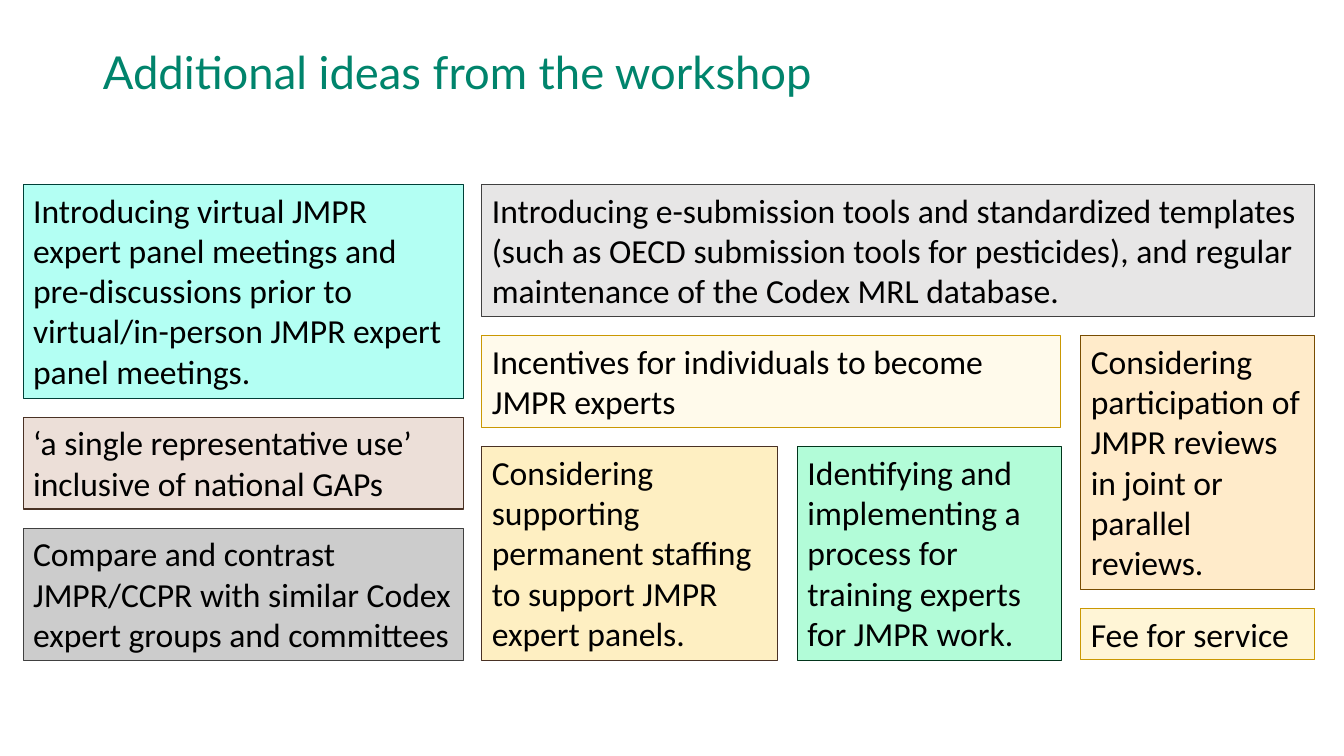
"""Build the slide of additional workshop ideas."""
from pptx import Presentation
from pptx.dml.color import RGBColor
from pptx.enum.shapes import MSO_SHAPE
from pptx.enum.text import MSO_ANCHOR, MSO_AUTO_SIZE, PP_ALIGN
from pptx.util import Pt

PX = 9144
GAP = 19
IDEAS_TOP = 183
LEFT_COLUMN = 23
MAIN_COLUMN = 478
TRAINING_COLUMN = 791
RIGHT_COLUMN = 1072

BLACK = RGBColor(0x00, 0x00, 0x00)
TEAL = RGBColor(0x00, 0x84, 0x6C)
CHARCOAL = RGBColor(0x40, 0x40, 0x40)
GOLD = RGBColor(0xCA, 0x98, 0x02)
BROWN = RGBColor(0x49, 0x31, 0x24)
DARK_GREEN = RGBColor(0x02, 0x35, 0x1C)
DARK_TEAL = RGBColor(0x00, 0x40, 0x37)
DARK_ORANGE = RGBColor(0x78, 0x4C, 0x01)
AQUA = RGBColor(0xB3, 0xFF, 0xF3)
MINT = RGBColor(0xB2, 0xFC, 0xD8)
ROSE = RGBColor(0xEC, 0xDF, 0xD8)
SILVER = RGBColor(0xCC, 0xCC, 0xCC)
PALE_GREY = RGBColor(0xE7, 0xE6, 0xE6)
IVORY = RGBColor(0xFF, 0xFA, 0xEB)
CREAM = RGBColor(0xFF, 0xF5, 0xD6)
YELLOW = RGBColor(0xFE, 0xEF, 0xC2)
PEACH = RGBColor(0xFF, 0xEB, 0xCA)


def write(frame, text, font="Calibri", size=24, color=BLACK, spacing=1.0,
          anchor=MSO_ANCHOR.TOP, fit=MSO_AUTO_SIZE.SHAPE_TO_FIT_TEXT):
    frame.text = text
    frame.word_wrap = True
    frame.auto_size = fit
    frame.vertical_anchor = anchor
    paragraph = frame.paragraphs[0]
    paragraph.alignment = PP_ALIGN.LEFT
    paragraph.line_spacing = spacing
    paragraph.font.name = font
    paragraph.font.size = Pt(size)
    paragraph.font.color.rgb = color


class IdeaSlide:
    def __init__(self, deck):
        self.slide = deck.slides.add_slide(deck.slide_layouts[5])

    def title(self, text, left, top, width, height):
        heading = self.slide.shapes.title
        heading.left, heading.top = left * PX, top * PX
        heading.width, heading.height = width * PX, height * PX
        write(heading.text_frame, text, font="Lato", size=32.4, color=TEAL,
              spacing=0.9, anchor=MSO_ANCHOR.MIDDLE, fit=MSO_AUTO_SIZE.NONE)

    def idea(self, text, left, top, width, height, fill, border):
        card = self.slide.shapes.add_shape(
            MSO_SHAPE.RECTANGLE, left * PX, top * PX, width * PX, height * PX)
        card.shadow.inherit = False
        card.fill.solid()
        card.fill.fore_color.rgb = fill
        card.line.color.rgb = border
        card.line.width = Pt(0.75)
        write(card.text_frame, text)

    def stack(self, left, top, width, ideas):
        for text, lines, fill, border in ideas:
            height = round(10 + 40.35 * lines)
            self.idea(text, left, top, width, height, fill, border)
            top += height + GAP
        return top


def main():
    deck = Presentation()
    deck.slide_width, deck.slide_height = 1333 * PX, 750 * PX
    workshop = IdeaSlide(deck)
    workshop.title("Additional ideas from the workshop", 92, 29, 866, 91)

    workshop.stack(LEFT_COLUMN, IDEAS_TOP, 437, [
        ("Introducing virtual JMPR expert panel meetings and pre-discussions "
         "prior to virtual/in-person JMPR expert panel meetings.",
         5, AQUA, DARK_TEAL),
        ("‘a single representative use’ inclusive of national GAPs",
         2, ROSE, BROWN),
        ("Compare and contrast JMPR/CCPR with similar Codex expert groups "
         "and committees", 3, SILVER, CHARCOAL),
    ])
    below_tools = workshop.stack(MAIN_COLUMN, IDEAS_TOP, 826, [
        ("Introducing e-submission tools and standardized templates (such as "
         "OECD submission tools for pesticides), and regular maintenance of "
         "the Codex MRL database.", 3, PALE_GREY, CHARCOAL),
    ])
    below_incentives = workshop.stack(MAIN_COLUMN, below_tools, 574, [
        ("Incentives for individuals to become JMPR experts",
         2, IVORY, GOLD),
    ])
    workshop.stack(MAIN_COLUMN, below_incentives, 293, [
        ("Considering supporting permanent staffing to support JMPR expert "
         "panels.", 5, YELLOW, BROWN),
    ])
    workshop.stack(TRAINING_COLUMN, below_incentives, 262, [
        ("Identifying and implementing a process for training experts for "
         "JMPR work.", 5, MINT, DARK_GREEN),
    ])
    workshop.stack(RIGHT_COLUMN, below_tools, 232, [
        ("Considering participation of JMPR reviews in joint or parallel "
         "reviews.", 6, PEACH, DARK_ORANGE),
        ("Fee for service", 1, CREAM, GOLD),
    ])
    deck.save("out.pptx")


if __name__ == "__main__":
    main()
